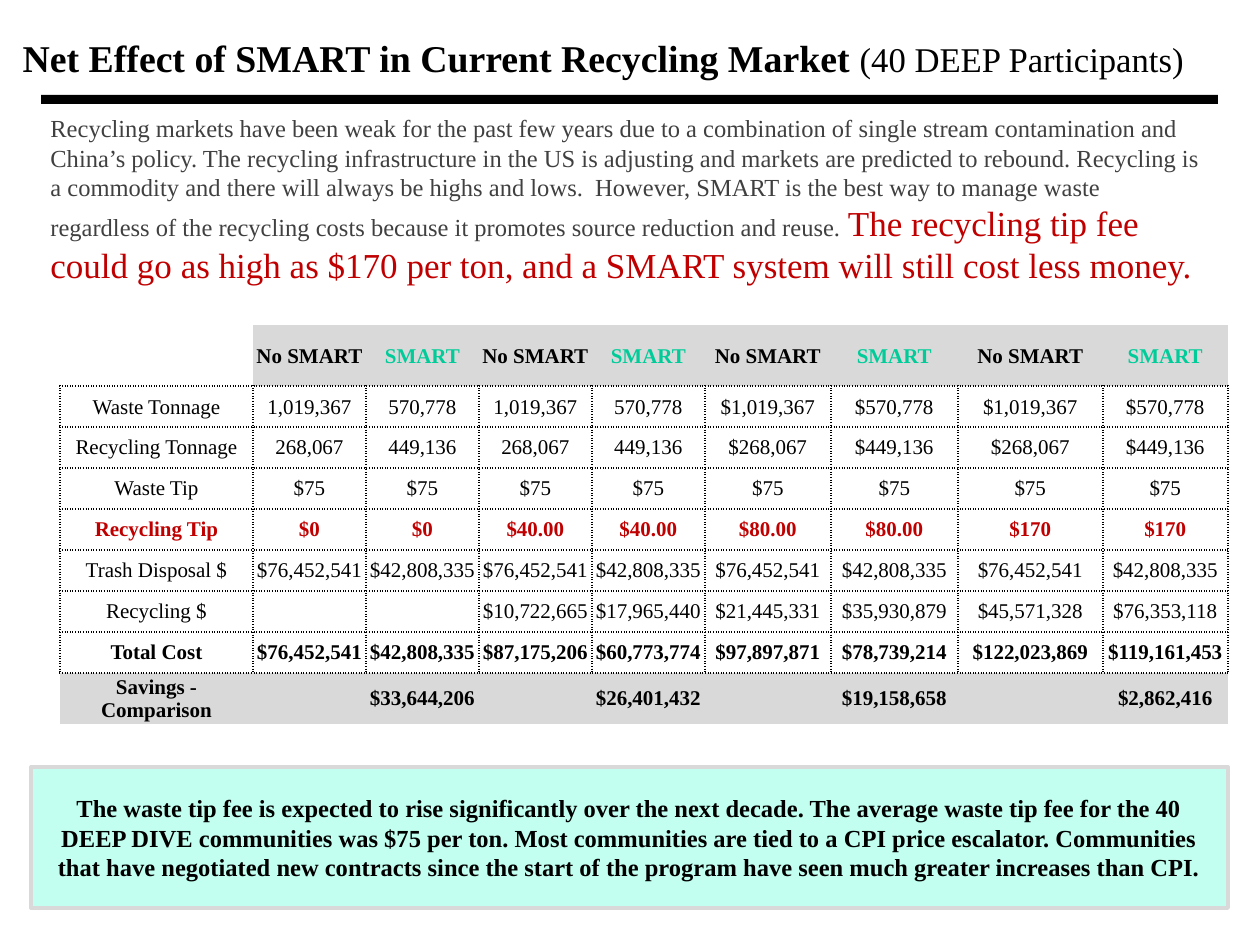
from dataclasses import dataclass

from lxml import etree
from pptx import Presentation
from pptx.dml.color import RGBColor
from pptx.enum.shapes import MSO_SHAPE
from pptx.enum.text import MSO_ANCHOR, MSO_AUTO_SIZE, PP_ALIGN
from pptx.oxml.ns import qn
from pptx.util import Emu, Pt

RECTANGLE = MSO_SHAPE.RECTANGLE
MIDDLE, TOP = MSO_ANCHOR.MIDDLE, MSO_ANCHOR.TOP
LEFT, CENTER = PP_ALIGN.LEFT, PP_ALIGN.CENTER
NO_AUTOFIT = MSO_AUTO_SIZE.NONE
PX_PER_INCH = 126
TITLE_ONLY_LAYOUT = 5


@dataclass(frozen=True)
class Theme:
    font: str = "Times New Roman"
    black: str = "000000"
    white: str = "FFFFFF"
    body: str = "404040"
    red: str = "C00000"
    green: str = "00CC99"
    gray: str = "D9D9D9"
    mint: str = "C2FFF0"
    title_size: float = 21.6
    subtitle_size: float = 19.8
    body_size: float = 14
    emphasis_size: float = 20
    table_size: float = 12
    callout_line: float = 2.25
    table_line: float = 1


THEME = Theme()


@dataclass(frozen=True)
class Box:
    left: int
    top: int
    width: int
    height: int

    def emu(self) -> tuple:
        return tuple(px(n) for n in (self.left, self.top, self.width, self.height))


@dataclass(frozen=True)
class TextRun:
    text: str
    size: float
    color: str = THEME.black
    bold: bool = False


@dataclass(frozen=True)
class CostRow:
    label: str
    values: tuple
    height: int = 41
    color: str = THEME.black
    bold: bool = False
    fill: str = THEME.white
    borders: str = "LRTB"


def px(length: int) -> Emu:
    return Emu(round(length * 914400 / PX_PER_INCH))


def rgb(color: str) -> RGBColor:
    return RGBColor.from_string(color)


def write(frame, runs: list, alignment=LEFT, anchor=TOP) -> None:
    frame.word_wrap = True
    frame.auto_size = NO_AUTOFIT
    frame.vertical_anchor = anchor
    add_runs(frame.paragraphs[0], runs, alignment)


def add_runs(paragraph, runs: list, alignment) -> None:
    paragraph.alignment = alignment
    for item in runs:
        run = paragraph.add_run()
        run.text = item.text
        run.font.name = THEME.font
        run.font.size = Pt(item.size)
        run.font.bold = item.bold
        run.font.color.rgb = rgb(item.color)


def add_rectangle(slide, box: Box, fill: str, line: str = ""):
    shape = slide.shapes.add_shape(RECTANGLE, *box.emu())
    shape.shadow.inherit = False
    shape.fill.solid()
    shape.fill.fore_color.rgb = rgb(fill)
    if line:
        shape.line.color.rgb = rgb(line)
        shape.line.width = Pt(THEME.callout_line)
    else:
        shape.line.fill.background()
    return shape


def set_borders(cell, dotted_sides: str) -> None:
    properties = cell._tc.get_or_add_tcPr()
    for position, side in enumerate("LRTB"):
        line = etree.Element(qn(f"a:ln{side}"), w=str(Pt(THEME.table_line)))
        if side in dotted_sides:
            fill = etree.SubElement(line, qn("a:solidFill"))
            etree.SubElement(fill, qn("a:srgbClr"), val=THEME.black)
            etree.SubElement(line, qn("a:prstDash"), val="sysDot")
        else:
            etree.SubElement(line, qn("a:noFill"))
        properties.insert(position, line)


def fill_cell(cell, text: str, row: CostRow, color: str, fill: str) -> None:
    cell.margin_left = cell.margin_right = cell.margin_top = px(1)
    cell.margin_bottom = 0
    cell.vertical_anchor = MIDDLE
    cell.fill.solid()
    cell.fill.fore_color.rgb = rgb(fill)
    set_borders(cell, row.borders)
    paragraph = cell.text_frame.paragraphs[0]
    if text:
        add_runs(paragraph, [TextRun(text, THEME.table_size, color, row.bold)], CENTER)
    else:
        # Keeps a blank cell from stretching its row
        paragraph._p.get_or_add_endParaRPr().set("sz", str(THEME.table_size * 100))


def add_cost_table(slide, box: Box, widths: list, rows: list) -> None:
    frame = slide.shapes.add_table(len(rows), len(widths), *box.emu())
    table = frame.table
    table.first_row = table.horz_banding = False
    for column, width in zip(table.columns, widths):
        column.width = px(width)
    for row_index, row in enumerate(rows):
        table.rows[row_index].height = px(row.height)
        for column_index, text in enumerate((row.label, *row.values)):
            color = THEME.green if text == "SMART" else row.color
            blank_corner = row_index == column_index == 0
            fill = THEME.white if blank_corner else row.fill
            fill_cell(table.cell(row_index, column_index), text, row, color, fill)


TRASH = ("$76,452,541", "$42,808,335")
COLUMN_WIDTHS = [193, 113, 113, 113, 113, 126, 127, 145, 125]
COST_ROWS = [
    CostRow("", ("No SMART", "SMART") * 4, 61, bold=True, fill=THEME.gray, borders="B"),
    CostRow("Waste Tonnage", ("1,019,367", "570,778") * 2 + ("$1,019,367", "$570,778") * 2),
    CostRow("Recycling Tonnage", ("268,067", "449,136") * 2 + ("$268,067", "$449,136") * 2),
    CostRow("Waste Tip", ("$75",) * 8),
    CostRow("Recycling Tip",
            ("$0", "$0", "$40.00", "$40.00", "$80.00", "$80.00", "$170", "$170"),
            color=THEME.red, bold=True),
    CostRow("Trash Disposal $", TRASH * 4),
    CostRow("Recycling $", ("", "", "$10,722,665", "$17,965,440", "$21,445,331",
                            "$35,930,879", "$45,571,328", "$76,353,118")),
    CostRow("Total Cost", TRASH + ("$87,175,206", "$60,773,774", "$97,897,871",
                                   "$78,739,214", "$122,023,869", "$119,161,453"), bold=True),
    CostRow("Savings - Comparison",
            ("", "$33,644,206", "", "$26,401,432", "", "$19,158,658", "", "$2,862,416"),
            51, bold=True, fill=THEME.gray, borders="T"),
]
TITLE = [
    TextRun("Net Effect of SMART in Current Recycling Market ", THEME.title_size, bold=True),
    TextRun("(40 DEEP Participants)", THEME.subtitle_size),
]
MARKET_SUMMARY = [
    TextRun("Recycling markets have been weak for the past few years due to a combination of "
            "single stream contamination and China’s policy. The recycling infrastructure in "
            "the US is adjusting and markets are predicted to rebound. Recycling is a commodity "
            "and there will always be highs and lows.  However, SMART is the best way to manage "
            "waste regardless of the recycling costs because it promotes source reduction and "
            "reuse. ", THEME.body_size, THEME.body),
    TextRun("The recycling tip fee could go as high as $170 per ton, and a SMART system will "
            "still cost less money.", THEME.emphasis_size, THEME.red),
]
TIP_FEE_OUTLOOK = [
    TextRun("The waste tip fee is expected to rise significantly over the next decade. The "
            "average waste tip fee for the 40 DEEP DIVE communities was $75 per ton. Most "
            "communities are tied to a CPI price escalator. Communities that have negotiated "
            "new contracts since the start of the program have seen much greater increases "
            "than CPI.", THEME.body_size, bold=True),
]


def main() -> None:
    presentation = Presentation()
    presentation.slide_width, presentation.slide_height = px(1260), px(945)
    slide = presentation.slides.add_slide(presentation.slide_layouts[TITLE_ONLY_LAYOUT])

    # Title and rule
    title = slide.shapes.title
    title.left, title.top, title.width, title.height = Box(10, 10, 1250, 95).emu()
    write(title.text_frame, TITLE, anchor=MIDDLE)
    add_rectangle(slide, Box(41, 95, 1177, 9), THEME.black)

    # Market summary
    summary = slide.shapes.add_textbox(*Box(38, 107, 1176, 170).emu())
    write(summary.text_frame, MARKET_SUMMARY)

    # Tip fee callout
    callout = add_rectangle(slide, Box(31, 767, 1197, 141), THEME.mint, THEME.gray)
    write(callout.text_frame, TIP_FEE_OUTLOOK, CENTER, MIDDLE)

    # Cost comparison
    table_box = Box(60, 325, sum(COLUMN_WIDTHS), sum(row.height for row in COST_ROWS))
    add_cost_table(slide, table_box, COLUMN_WIDTHS, COST_ROWS)

    presentation.save("out.pptx")


if __name__ == "__main__":
    main()
